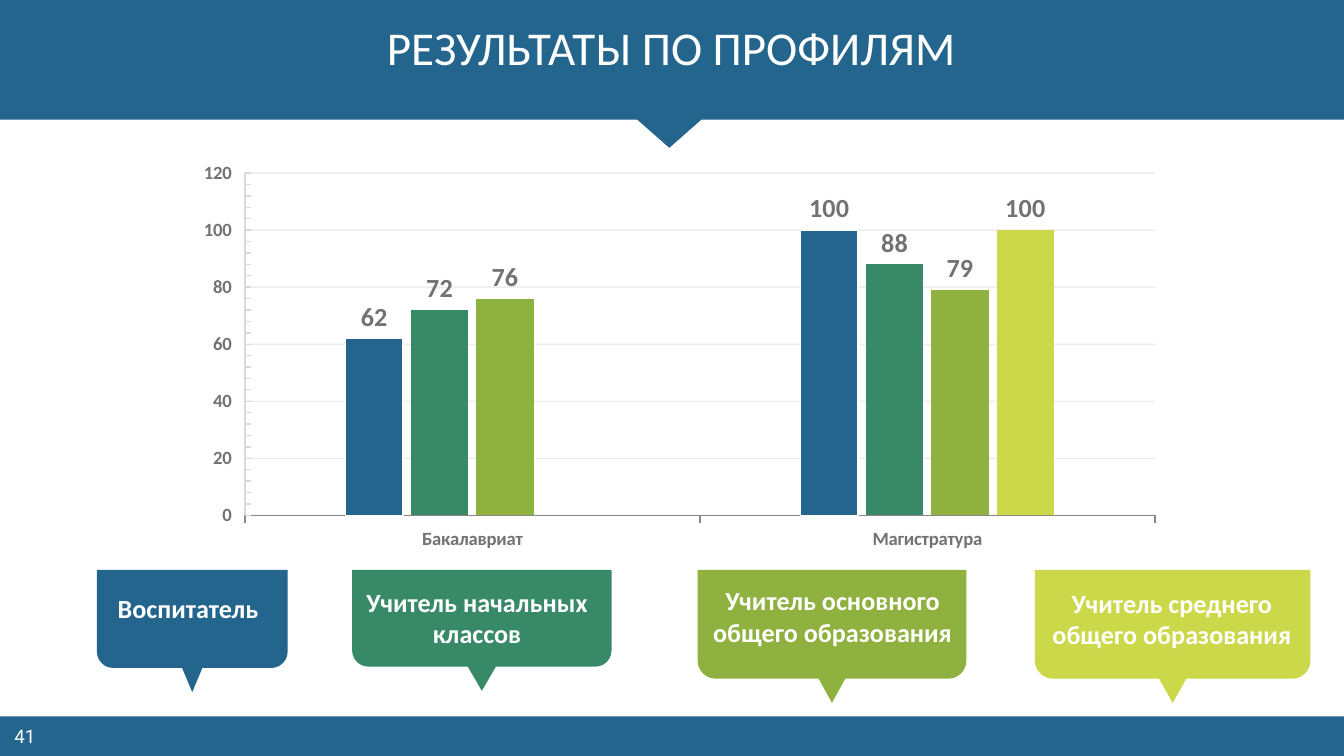
from lxml.etree import SubElement
from pptx import Presentation
from pptx.chart.data import CategoryChartData
from pptx.dml.color import RGBColor
from pptx.enum.chart import XL_CHART_TYPE, XL_LABEL_POSITION, XL_TICK_LABEL_POSITION, XL_TICK_MARK
from pptx.enum.shapes import MSO_SHAPE
from pptx.enum.text import MSO_ANCHOR, PP_ALIGN
from pptx.oxml.ns import qn
from pptx.util import Inches, Pt

THEME = {
    "blue": "24658D", "green": "388968", "olive": "8FB140", "lime": "CAD849",
    "white": "FFFFFF", "text": "727272", "grid": "D9D9D9", "axis": "898989",
    "font": "Calibri", "number_font": "Roboto",
    "title": 25.2, "label": 14, "axis_size": 10, "number": 10,
}
W = 10
H = W * 9 / 16
TITLE = "РЕЗУЛЬТАТЫ ПО ПРОФИЛЯМ"
NUMBER = "41"
CATEGORIES = ["Бакалавриат", "Магистратура"]
SERIES = [
    ("Series 1", (62, 100), "blue"),
    ("Series 2", (72, 88), "green"),
    ("Series 3", (76, 79), "olive"),
    ("Series 4", (None, 100), "lime"),
]
CALLOUT_TOP, TAIL_DROP = 4.24, 0.18
CALLOUTS = [
    ("Воспитатель", "blue", (0.72, 1.42, 0.73), (0.31, 0.37), (0.87, 4.41, 1.06, 0.37)),
    ("Учитель начальных классов", "green", (2.62, 1.93, 0.72), (0.43, 0.37), (2.62, 4.36, 1.86, 0.71)),
    ("Учитель основного общего образования", "olive", (5.19, 2, 0.81), (0.45, 0.41), (5.29, 4.35, 1.81, 0.47)),
    ("Учитель среднего общего образования", "lime", (7.7, 2.05, 0.81), (0.46, 0.41), (7.8, 4.37, 1.84, 0.47)),
]


def color(name):
    return RGBColor.from_string(THEME[name])


def box(*lengths):
    return [Inches(v) for v in lengths]


def add_filled(shapes, kind, at, fill, rotation=0):
    sp = shapes.add_shape(kind, *box(*at))
    sp.shadow.inherit = False
    sp.fill.solid()
    sp.fill.fore_color.rgb = color(fill)
    sp.line.fill.background()
    sp.rotation = rotation
    return sp


def style_font(font, size, name, fill, bold=False):
    font.size, font.name, font.bold = Pt(THEME[size]), THEME[name], bold
    font.color.rgb = color(fill)


def write(sp, text, size, name="font", bold=False, anchor=MSO_ANCHOR.TOP, wrap=True):
    tf = sp.text_frame
    tf.margin_left = tf.margin_right = tf.margin_top = tf.margin_bottom = 0
    tf.word_wrap, tf.vertical_anchor = wrap, anchor
    p = tf.paragraphs[0]
    p.alignment = PP_ALIGN.CENTER
    r = p.add_run()
    r.text = text
    style_font(r.font, size, name, "white", bold)


def add_chart(s):
    data = CategoryChartData()
    data.categories = CATEGORIES
    for name, values, _ in SERIES:
        data.add_series(name, values)
    chart = s.shapes.add_chart(
        XL_CHART_TYPE.COLUMN_CLUSTERED, *box(1.37, 1.15, 7.37, 3), data).chart
    chart.has_legend = chart.has_title = False
    style_font(chart.font, "axis_size", "font", "text", True)

    plot = chart.plots[0]
    plot.gap_width, plot.overlap, plot.vary_by_categories = 351, -14, False
    for series, (_, _, fill) in zip(plot.series, SERIES):
        series.format.fill.solid()
        series.format.fill.fore_color.rgb = color(fill)
        labels = series.data_labels
        labels.show_value = True
        labels.position = XL_LABEL_POSITION.OUTSIDE_END
        style_font(labels.font, "label", "font", "text", True)
    outline = plot.series[0].format.line
    outline.width = Pt(0.75)
    outline.color.rgb = color("white")

    chart.category_axis.major_tick_mark = XL_TICK_MARK.OUTSIDE
    chart.category_axis.format.line.width = Pt(0.75)
    chart.category_axis.format.line.color.rgb = color("axis")
    axis = chart.value_axis
    axis.minimum_scale, axis.maximum_scale = 0, 120
    axis.major_unit, axis.minor_unit = 20, 4
    axis.major_tick_mark, axis.minor_tick_mark = XL_TICK_MARK.NONE, XL_TICK_MARK.INSIDE
    axis.tick_label_position = XL_TICK_LABEL_POSITION.LOW
    axis.has_major_gridlines = True
    for line in (axis.format.line, axis.major_gridlines.format.line):
        line.width = Pt(0.75)
        line.color.rgb = color("grid")
    grid = axis.major_gridlines.format.line.fill._xPr.find(".//" + qn("a:srgbClr"))
    SubElement(grid, qn("a:alpha"), val="48000")


def add_callout(s, text, fill, body, tail, text_at):
    left, width, height = body
    tail_w, tail_h = tail
    tail_left = left + (width - tail_w) / 2
    tail_top = CALLOUT_TOP + height + TAIL_DROP - tail_h
    shapes = s.shapes.add_group_shape().shapes
    add_filled(shapes, MSO_SHAPE.ISOSCELES_TRIANGLE, (tail_left, tail_top, tail_w, tail_h), fill, 180)
    add_filled(shapes, MSO_SHAPE.ROUND_2_SAME_RECTANGLE, (left, CALLOUT_TOP, width, height), fill, 180)
    write(shapes.add_textbox(*box(*text_at)), text, "label", bold=True, wrap=" " in text)


def main():
    prs = Presentation()
    prs.slide_width, prs.slide_height = box(W, H)
    s = prs.slides.add_slide(prs.slide_layouts[5])

    add_filled(s.shapes, MSO_SHAPE.RECTANGLE, (0, 5.33, W, H - 5.33), "blue")
    write(s.shapes.add_textbox(*box(0.02, 5.39, 0.33, 0.17)), NUMBER,
          "number", "number_font", anchor=MSO_ANCHOR.MIDDLE)
    header = s.shapes.add_group_shape().shapes
    add_filled(header, MSO_SHAPE.RECTANGLE, (0, 0, W, 0.89), "blue")
    add_filled(header, MSO_SHAPE.ISOSCELES_TRIANGLE, (4.73, 0.88, 0.5, 0.22), "blue", 180)

    add_chart(s)

    title = s.shapes.title
    title.left, title.top, title.width, title.height = box(0.43, 0.14, 9.13, 0.37)
    write(title, TITLE, "title")
    s.shapes._spTree.append(title._element)

    for callout in CALLOUTS:
        add_callout(s, *callout)
    prs.save("out.pptx")


if __name__ == "__main__":
    main()
